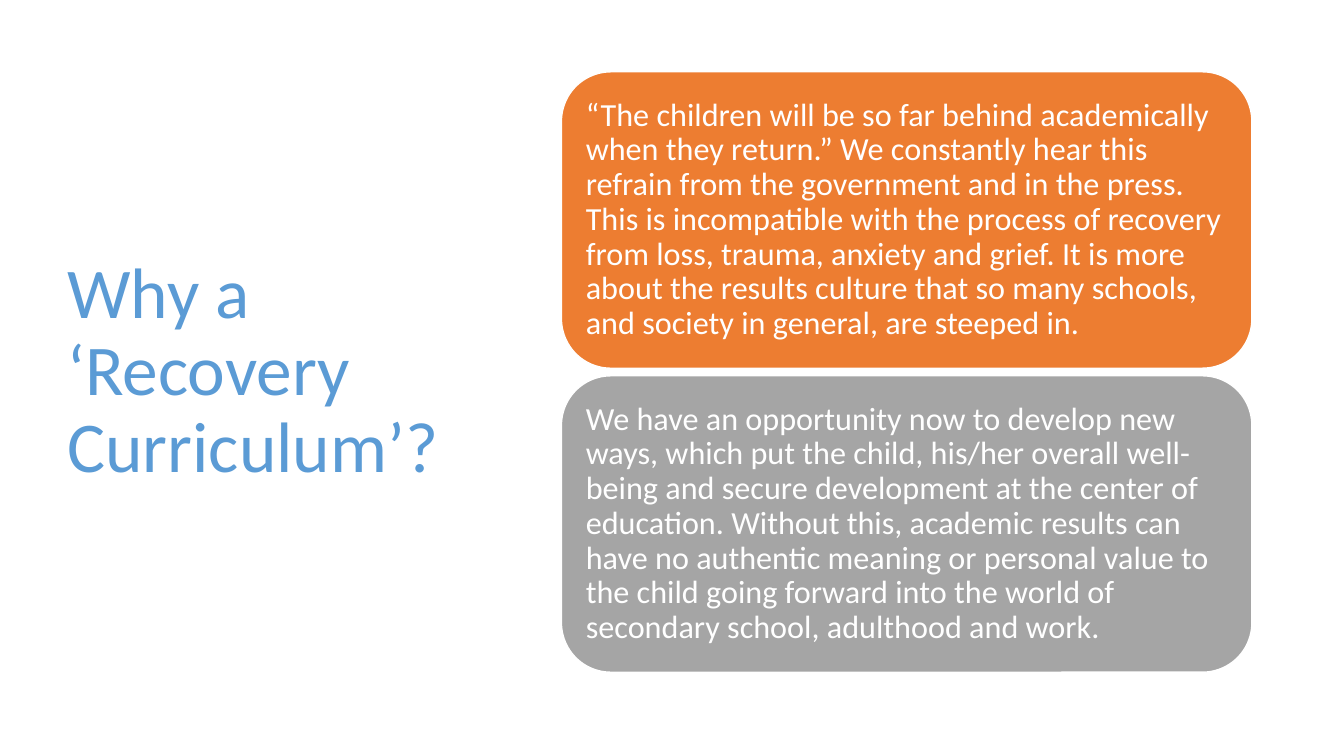
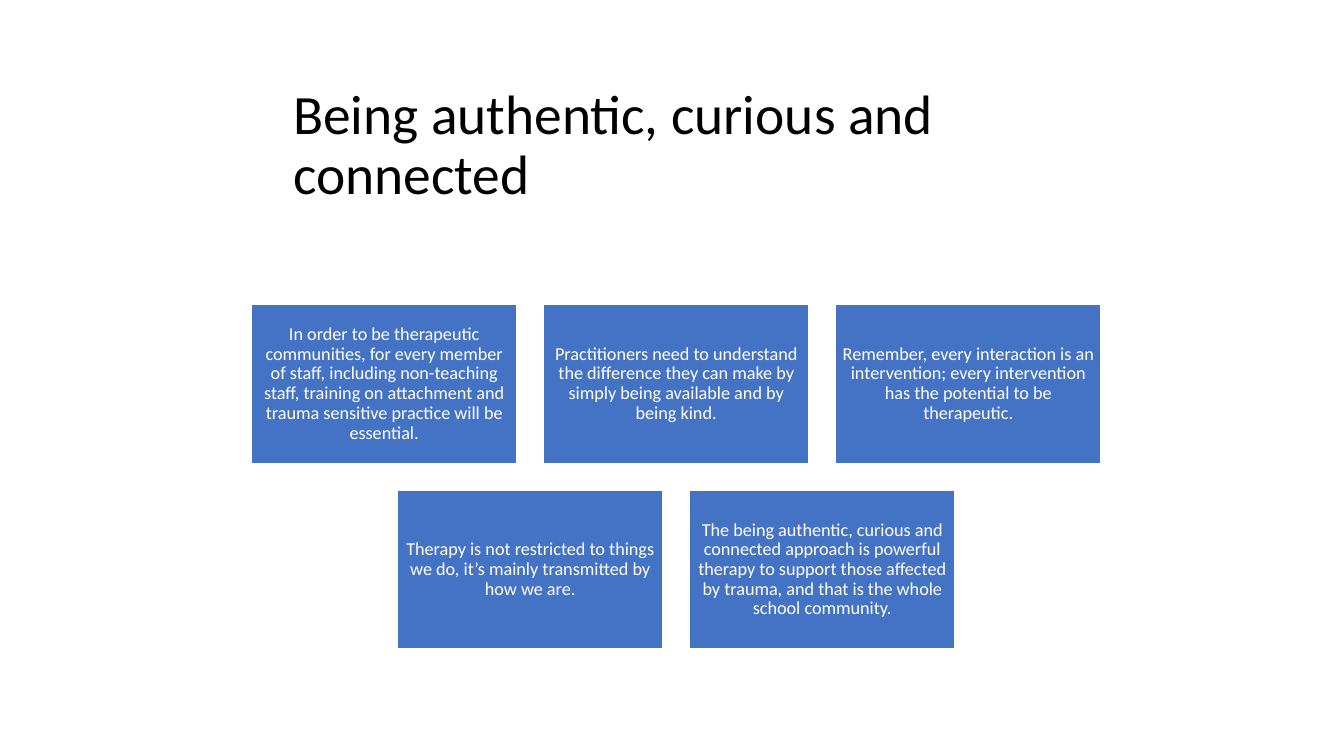
from pptx import Presentation
from pptx.dml.color import RGBColor
from pptx.enum.shapes import MSO_SHAPE
from pptx.enum.text import MSO_ANCHOR, PP_ALIGN
from pptx.util import Cm, Pt

SLIDE_WIDTH, SLIDE_HEIGHT = 33.87, 19.05


def rgb(value):
    return RGBColor.from_string(value)


class Deck:
    FONT = "Calibri"
    BLACK, WHITE = "000000", "FFFFFF"
    SKY, BLUE = "5B9BD5", "4472C4"
    ORANGE, GREY = "ED7D31", "A5A5A5"
    LINE_SPACING = 0.9

    def __init__(self):
        self.prs = Presentation()
        self.prs.slide_width = Cm(SLIDE_WIDTH)
        self.prs.slide_height = Cm(SLIDE_HEIGHT)
        self.slide = None

    def new_slide(self):
        self.slide = self.prs.slides.add_slide(self.prs.slide_layouts[6])

    def set_text(self, frame, text, size, color, align, inset_x, inset_y):
        frame.word_wrap = True
        frame.vertical_anchor = MSO_ANCHOR.MIDDLE
        frame.margin_left = frame.margin_right = Cm(inset_x)
        frame.margin_top = frame.margin_bottom = Cm(inset_y)
        frame.text = text
        paragraph = frame.paragraphs[0]
        paragraph.alignment = align
        paragraph.line_spacing = self.LINE_SPACING
        font = paragraph.runs[0].font
        font.name, font.size = self.FONT, Pt(size)
        font.color.rgb = rgb(color)

    def title(self, text, left, top, width, height, size, color):
        heading = self.slide.shapes.add_textbox(
            Cm(left), Cm(top), Cm(width), Cm(height))
        self.set_text(heading.text_frame, text, size, color,
                      PP_ALIGN.LEFT, 0.25, 0.13)

    def card(self, kind, text, left, top, width, height, fill, size, align, inset):
        card = self.slide.shapes.add_shape(
            kind, Cm(left), Cm(top), Cm(width), Cm(height))
        card.shadow.inherit = False
        card.fill.solid()
        card.fill.fore_color.rgb = rgb(fill)
        card.line.color.rgb = rgb(self.WHITE)
        card.line.width = Pt(1)
        self.set_text(card.text_frame, text, size, self.WHITE, align, inset, inset)

    def panel(self, text, left, top, width, height, fill):
        self.card(MSO_SHAPE.ROUNDED_RECTANGLE, text, left, top, width, height,
                  fill, 23, PP_ALIGN.LEFT, 0.25)

    def tile(self, text, left, top, width, height):
        self.card(MSO_SHAPE.RECTANGLE, text, left, top, width, height,
                  self.BLUE, 13, PP_ALIGN.CENTER, 0.13)


def recovery_slide(deck):
    deck.new_slide()
    deck.title("Why a ‘Recovery Curriculum’?", 1.45, 1.73, 10.57, 15.29,
               51, deck.SKY)

    # Stacked arguments
    arguments = [
        ("“The children will be so far behind academically when they return.” "
         "We constantly hear this refrain from the government and in the press. "
         "This is incompatible with the process of recovery from loss, trauma, "
         "anxiety and grief. It is more about the results culture that so many "
         "schools, and society in general, are steeped in.", deck.ORANGE),
        ("We have an opportunity now to develop new ways, which put the child, "
         "his/her overall well-being and secure development at the center of "
         "education. Without this, academic results can have no authentic "
         "meaning or personal value to the child going forward into the world "
         "of secondary school, adulthood and work.", deck.GREY),
    ]
    height, gap = 7.47, 0.19
    for index, (argument, fill) in enumerate(arguments):
        deck.panel(argument, 14.15, 1.81 + index * (height + gap),
                   17.4, height, fill)


def connected_slide(deck):
    deck.new_slide()
    deck.title("Being authentic, curious and connected", 7.14, 2.11, 19.51, 3.18,
               39.6, deck.BLACK)

    # Principles, each row centred on the same axis
    rows = [
        ["In order to be therapeutic communities, for every member of staff, "
         "including non-teaching staff, training on attachment and trauma "
         "sensitive practice will be essential.",
         "Practitioners need to understand the difference they can make by "
         "simply being available and by being kind.",
         "Remember, every interaction is an intervention; every intervention "
         "has the potential to be therapeutic."],
        ["Therapy is not restricted to things we do, it’s mainly transmitted "
         "by how we are.",
         "The being authentic, curious and connected approach is powerful "
         "therapy to support those affected by trauma, and that is the whole "
         "school community."],
    ]
    axis, top = 17.04, 7.67
    width, height, gap = 6.69, 4.01, 0.67
    for row_index, principles in enumerate(rows):
        row_width = len(principles) * (width + gap) - gap
        for column, principle in enumerate(principles):
            deck.tile(principle,
                      axis - row_width / 2 + column * (width + gap),
                      top + row_index * (height + gap), width, height)


def main():
    deck = Deck()
    recovery_slide(deck)
    connected_slide(deck)
    deck.prs.save("out.pptx")


if __name__ == "__main__":
    main()
